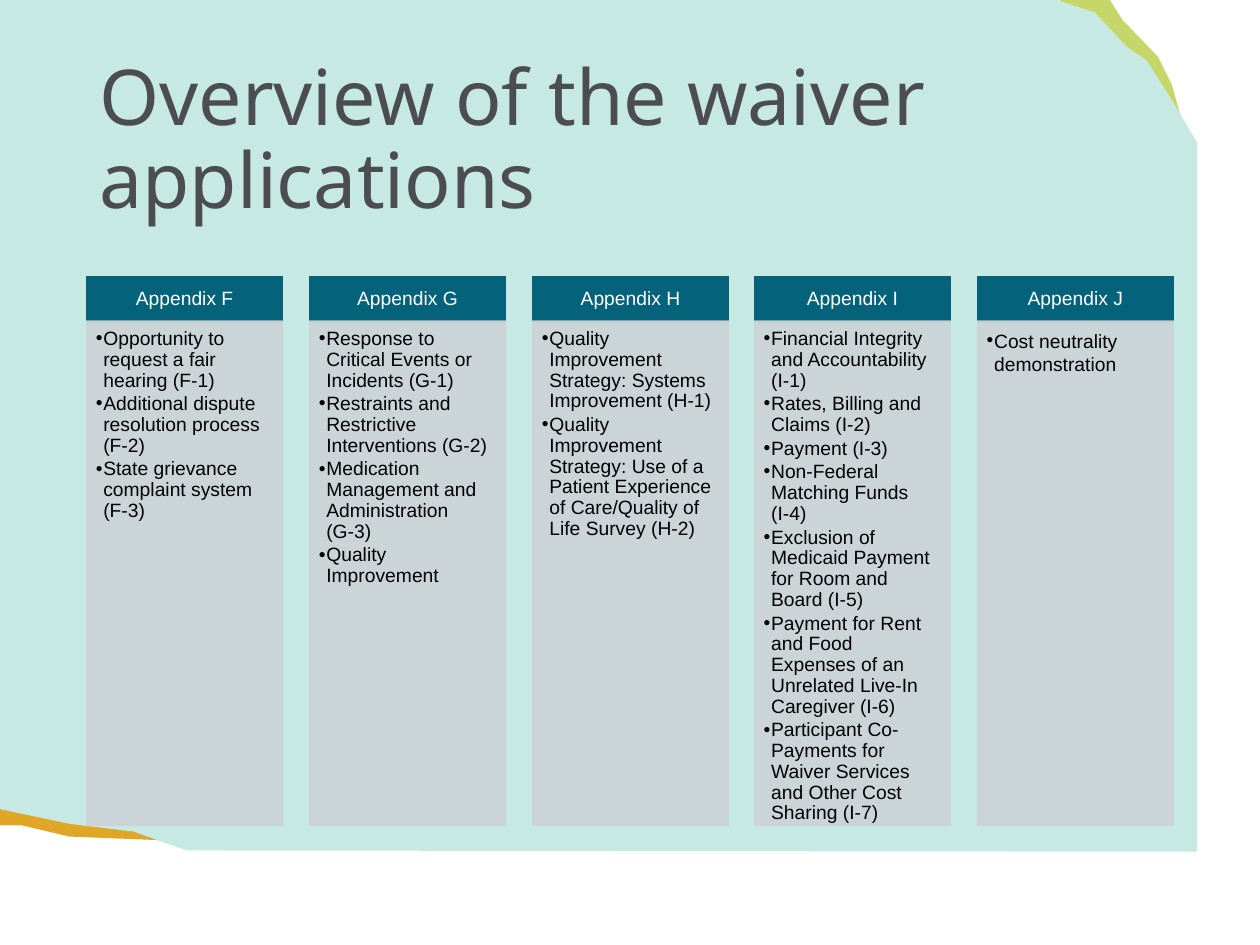
from dataclasses import dataclass

from pptx import Presentation
from pptx import util as u
from pptx.dml.color import RGBColor
from pptx.enum import shapes, text
from pptx.oxml.ns import qn

PX = 9144  # EMU per px, 100 px to the inch


@dataclass(frozen=True)
class Theme:
    background: str = "C6E9E3"
    gold: str = "E0A626"
    lime: str = "C6D668"
    title: str = "4B4D4F"
    header: str = "04627A"
    header_text: str = "FFFFFF"
    panel: str = "CCD3D7"
    panel_text: str = "000000"
    panel_opacity: int = 90
    title_font: str = "Noto Sans"
    body_font: str = "Arial"
    title_size: int = 44
    body_size: int = 11


@dataclass(frozen=True)
class Box:
    left: int
    top: int
    width: int
    height: int


@dataclass(frozen=True)
class Outline:
    color: str
    points: tuple[tuple[int, int], ...]


@dataclass(frozen=True)
class Appendix:
    letter: str
    items: tuple[str, ...]
    line_spacing: float = 0.9


T = Theme()
TITLE = Box(69, 40, 862, 145)
COLUMN_WIDTH, HEADER_TOP, HEADER_HEIGHT, PANEL_HEIGHT = 155, 220, 35, 400
INDENT = 6

OUTLINES = (
    Outline(T.gold, ((-1, 629), (38, 627), (131, 635), (131, 667),
                     (55, 664), (17, 655), (-1, 655))),
    Outline(T.lime, ((847, 43), (841, 0), (881, 0), (891, 16),
                     (919, 45), (930, 67), (941, 106))),
    Outline(T.background, ((0, 0), (836, -1), (869, 10), (894, 37), (910, 48),
                           (931, 81), (950, 113), (950, 676), (148, 675),
                           (106, 660), (56, 654), (-1, 642))),
)

APPENDICES = (
    Appendix("F", ("Opportunity to request a fair hearing (F-1)",
                   "Additional dispute resolution process (F-2)",
                   "State grievance complaint system (F-3)")),
    Appendix("G", ("Response to Critical Events or Incidents (G-1)",
                   "Restraints and Restrictive Interventions (G-2)",
                   "Medication Management and Administration (G-3)",
                   "Quality Improvement")),
    Appendix("H", ("Quality Improvement Strategy: Systems Improvement (H-1)",
                   "Quality Improvement Strategy: Use of a Patient Experience "
                   "of Care/Quality of Life Survey (H-2)")),
    Appendix("I", ("Financial Integrity and Accountability (I-1)",
                   "Rates, Billing and Claims (I-2)",
                   "Payment (I-3)",
                   "Non-Federal Matching Funds (I-4)",
                   "Exclusion of Medicaid Payment for Room and Board (I-5)",
                   "Payment for Rent and Food Expenses of an Unrelated "
                   "Live-In Caregiver (I-6)",
                   "Participant Co-Payments for Waiver Services and Other "
                   "Cost Sharing (I-7)")),
    Appendix("J", ("Cost neutrality demonstration",), line_spacing=1.0),
)


def set_all(obj, **values) -> None:
    for name, value in values.items():
        setattr(obj, name, value)


def add_child(parent, tag: str, **attributes: str) -> None:
    parent.append(parent.makeelement(qn(tag), attributes))


def emu(box: Box) -> tuple[int, ...]:
    return tuple(n * PX for n in (box.left, box.top, box.width, box.height))


def paint(fill, color: str, opacity: int = 100) -> None:
    fill.solid()
    fill.fore_color.rgb = RGBColor.from_string(color)
    if opacity < 100:
        for clr in fill._xPr.iter(qn("a:srgbClr")):
            add_child(clr, "a:alpha", val=str(opacity * 1000))


def draw_outline(s, outline: Outline) -> None:
    first, *rest = outline.points
    builder = s.shapes.build_freeform(*first, scale=PX)
    builder.add_line_segments(rest, close=True)
    sp = builder.convert_to_shape()
    sp.shadow.inherit = False
    paint(sp.fill, outline.color)
    sp.line.fill.background()


def draw_rect(s, box: Box, color: str, opacity: int = 100):
    sp = s.shapes.add_shape(shapes.MSO_SHAPE.RECTANGLE, *emu(box))
    sp.shadow.inherit = False
    paint(sp.fill, color, opacity)
    sp.line.width = u.Pt(1)
    paint(sp.line.fill, color, opacity)
    add_child(sp.line._get_or_add_ln(), "a:miter", lim="800000")
    return sp


def set_frame(tf, anchor, margins: tuple[int, int, int, int]) -> None:
    left, top, right, bottom = (m * PX for m in margins)
    set_all(tf, word_wrap=True, vertical_anchor=anchor, margin_left=left,
            margin_top=top, margin_right=right, margin_bottom=bottom)


def write(p, words: str, font: str, size: int, color: str, **paragraph) -> None:
    set_all(p, **paragraph)
    r = p.add_run()
    r.text = words
    set_all(r.font, name=font, size=u.Pt(size))
    r.font.color.rgb = RGBColor.from_string(color)


def add_bullet(p) -> None:
    pPr = p._p.get_or_add_pPr()
    pPr.set("marL", str(INDENT * PX))
    pPr.set("indent", str(-INDENT * PX))
    add_child(pPr, "a:buFont", typeface=T.body_font)
    add_child(pPr, "a:buChar", char="•")


def draw_title(s) -> None:
    tf = s.shapes.add_textbox(*emu(TITLE)).text_frame
    set_frame(tf, text.MSO_ANCHOR.MIDDLE, (10, 5, 10, 5))
    write(tf.paragraphs[0], "Overview of the waiver applications",
          T.title_font, T.title_size, T.title, line_spacing=0.9)


def draw_appendix(s, appendix: Appendix, left: int) -> None:
    """Draw one column: a header band above a panel of bullets."""
    header = Box(left, HEADER_TOP, COLUMN_WIDTH, HEADER_HEIGHT)
    tf = draw_rect(s, header, T.header).text_frame
    set_frame(tf, text.MSO_ANCHOR.MIDDLE, (9, 5, 9, 5))
    write(tf.paragraphs[0], f"Appendix {appendix.letter}", T.body_font,
          T.body_size, T.header_text, line_spacing=0.9,
          alignment=text.PP_ALIGN.CENTER)

    panel = Box(left, HEADER_TOP + HEADER_HEIGHT, COLUMN_WIDTH, PANEL_HEIGHT)
    tf = draw_rect(s, panel, T.panel, T.panel_opacity).text_frame
    set_frame(tf, text.MSO_ANCHOR.TOP, (7, 6, 9, 10))
    for i, item in enumerate(appendix.items):
        p = tf.add_paragraph() if i else tf.paragraphs[0]
        add_bullet(p)
        write(p, item, T.body_font, T.body_size, T.panel_text, level=1,
              alignment=text.PP_ALIGN.LEFT, space_after=u.Pt(1.65),
              line_spacing=appendix.line_spacing)


def main() -> None:
    prs = Presentation()
    set_all(prs, slide_width=1000 * PX, slide_height=750 * PX)
    s = prs.slides.add_slide(prs.slide_layouts[6])
    for outline in OUTLINES:
        draw_outline(s, outline)
    draw_title(s)
    pitch = (TITLE.width - COLUMN_WIDTH) / (len(APPENDICES) - 1)
    for i, appendix in enumerate(APPENDICES):
        draw_appendix(s, appendix, int(TITLE.left + i * pitch + 0.5))
    prs.save("out.pptx")


if __name__ == "__main__":
    main()
